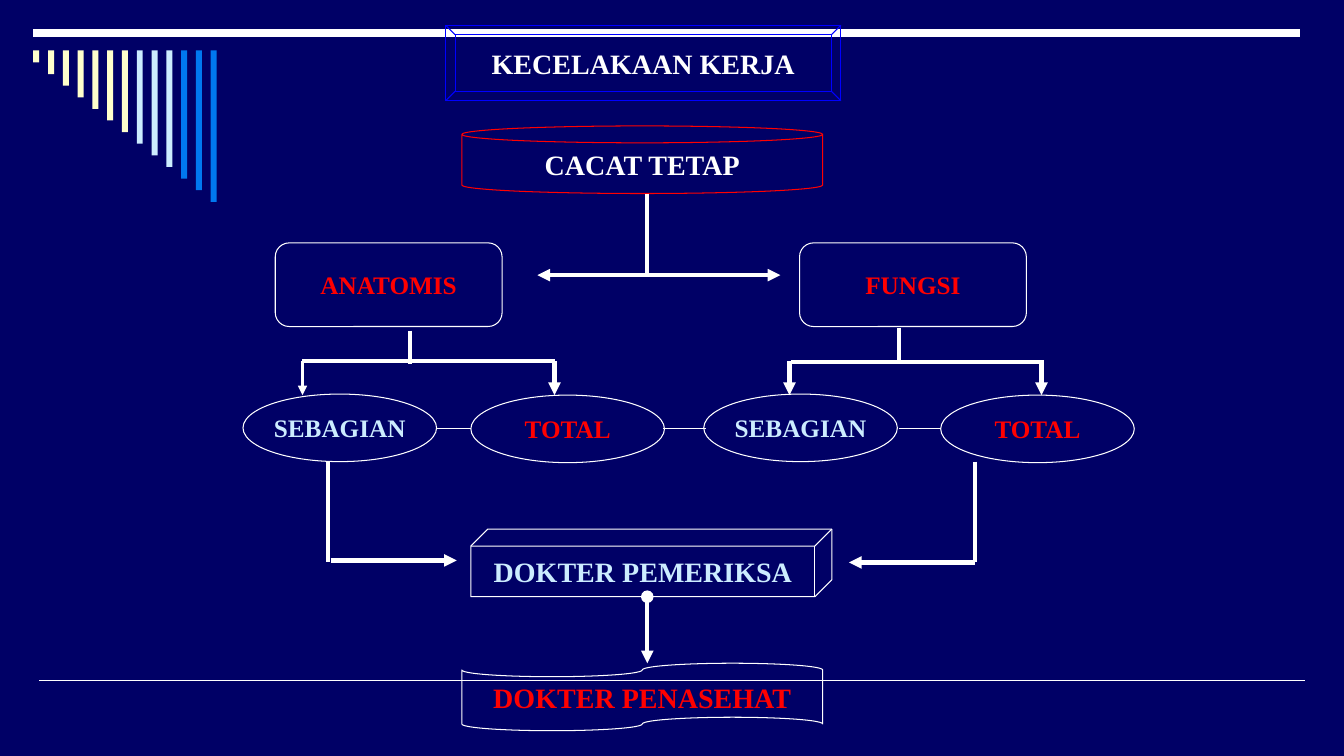
from lxml import etree
from pptx import Presentation
from pptx.dml.color import RGBColor
from pptx.enum.shapes import MSO_CONNECTOR, MSO_SHAPE
from pptx.enum.text import MSO_ANCHOR, PP_ALIGN
from pptx.oxml.ns import qn
from pptx.util import Inches, Pt

STRAIGHT = MSO_CONNECTOR.STRAIGHT
RECTANGLE = MSO_SHAPE.RECTANGLE
BEVEL = MSO_SHAPE.BEVEL
CAN = MSO_SHAPE.CAN
ROUNDED = MSO_SHAPE.ROUNDED_RECTANGLE
OVAL = MSO_SHAPE.OVAL
CUBE = MSO_SHAPE.CUBE
TAPE = MSO_SHAPE.FLOWCHART_PUNCHED_TAPE
MIDDLE = MSO_ANCHOR.MIDDLE
CENTER = PP_ALIGN.CENTER

COLORS = {
    "navy": "000066",
    "white": "FFFFFF",
    "red": "FF0000",
    "blue": "0000FF",
    "cream": "FFFFCC",
    "pale": "CCECFF",
    "azure": "0078F0",
}
FONT = "Times New Roman"
THIN, THICK = 0.75, 3

BAR_COLORS = ["cream"] * 7 + ["pale"] * 3 + ["azure"] * 3

# preset, left, top, width, height, outline, text, size, text colour
NODES = [
    (BEVEL, 4.42, 0.25, 3.92, 0.75, "blue", "KECELAKAAN KERJA", 20, "white"),
    (CAN, 4.58, 1.25, 3.58, 0.67, "red", "CACAT TETAP", 20, "white"),
    (ROUNDED, 2.73, 2.41, 2.25, 0.83, "white", "ANATOMIS", 18, "red"),
    (ROUNDED, 7.93, 2.41, 2.25, 0.83, "white", "FUNGSI", 18, "red"),
    (TAPE, 4.58, 6.58, 3.58, 0.67, "white", "DOKTER PENASEHAT", 20, "red"),
    (OVAL, 2.41, 3.91, 1.92, 0.67, "white", "SEBAGIAN", 18, "pale"),
    (OVAL, 4.67, 3.92, 1.92, 0.67, "white", "TOTAL", 18, "red"),
    (OVAL, 6.98, 3.91, 1.92, 0.67, "white", "SEBAGIAN", 18, "pale"),
    (OVAL, 9.33, 3.92, 1.92, 0.67, "white", "TOTAL", 18, "red"),
    (CUBE, 4.67, 5.25, 3.58, 0.67, "white", "DOKTER PEMERIKSA", 20, "pale"),
]

# start x, start y, end x, end y
OVAL_LINKS = [(4.33, 4.25, 4.67, 4.25), (6.58, 4.25, 7, 4.25), (8.92, 4.25, 9.33, 4.25)]
PLAIN_LINES = [
    (3.25, 4.58, 3.25, 5.58),
    (9.67, 4.58, 9.67, 5.58),
    (3, 3.58, 5.5, 3.58),
    (7.85, 3.59, 10.35, 3.59),
    (4.07, 3.28, 4.07, 3.61),
    (8.92, 3.25, 8.92, 3.58),
    (6.42, 1.92, 6.42, 2.75),
]
DOCTOR_ARROWS = [(3.28, 5.56, 4.53, 5.56), (9.67, 5.58, 8.42, 5.58)]
# x and line width of the arrows that drop onto the ovals
DROPS = [(3, 2.25), (5.5, THICK), (7.83, THICK), (10.33, THICK)]


def rgb(name):
    return RGBColor.from_string(COLORS[name])


class SlideBuilder:
    def __init__(self, slide):
        self.slide = slide
        background = slide.background.fill
        background.solid()
        background.fore_color.rgb = rgb("navy")

    def add_plain_shape(self, preset, left, top, width, height):
        shape = self.slide.shapes.add_shape(
            preset, Inches(left), Inches(top), Inches(width), Inches(height))
        shape.shadow.inherit = False
        return shape

    def add_bar(self, left, top, width, height, color):
        bar = self.add_plain_shape(RECTANGLE, left, top, width, height)
        bar.fill.solid()
        bar.fill.fore_color.rgb = rgb(color)
        bar.line.fill.background()

    def add_node(self, preset, left, top, width, height, outline, text, size, color):
        """Outlined shape with one centred bold label."""
        node = self.add_plain_shape(preset, left, top, width, height)
        node.fill.background()
        node.line.color.rgb = rgb(outline)
        node.line.width = Pt(THIN)
        frame = node.text_frame
        frame.word_wrap = False
        frame.vertical_anchor = MIDDLE
        paragraph = frame.paragraphs[0]
        paragraph.alignment = CENTER
        run = paragraph.add_run()
        run.text = text
        run.font.name = FONT
        run.font.size = Pt(size)
        run.font.bold = True
        run.font.color.rgb = rgb(color)

    def add_line(self, ends, width=THICK, head=None, tail=None):
        """White line; head and tail name the arrowheads at its start and end."""
        connector = self.slide.shapes.add_connector(
            STRAIGHT, *[Inches(value) for value in ends])
        connector.line.color.rgb = rgb("white")
        connector.line.width = Pt(width)
        outline = connector.line._get_or_add_ln()
        for tag, kind in (("a:headEnd", head), ("a:tailEnd", tail)):
            if kind:
                etree.SubElement(outline, qn(tag), type=kind)
        etree.SubElement(connector._element.spPr, qn("a:effectLst"))


def main():
    presentation = Presentation()
    presentation.slide_width = Inches(13.33)
    presentation.slide_height = Inches(7.5)
    builder = SlideBuilder(presentation.slides.add_slide(presentation.slide_layouts[6]))

    builder.add_line((0.39, 6.75, 12.94, 6.75), 1)
    builder.add_line((0.33, 0.33, 12.89, 0.33), 6)
    bar_step = (2.09 - 0.33) / (len(BAR_COLORS) - 1)
    for index, color in enumerate(BAR_COLORS):
        builder.add_bar(0.33 + index * bar_step, 0.5, 0.06, 0.12 * (1 + index * 0.96), color)

    for node in NODES:
        builder.add_node(*node)

    for ends in OVAL_LINKS:
        builder.add_line(ends, THIN)
    for ends in PLAIN_LINES:
        builder.add_line(ends)
    for ends in DOCTOR_ARROWS:
        builder.add_line(ends, tail="triangle")
    for x, width in DROPS:
        builder.add_line((x, 3.58, x, 3.92), width, tail="triangle")
    builder.add_line((5.33, 2.73, 7.74, 2.73), head="triangle", tail="triangle")
    builder.add_line((6.42, 5.92, 6.42, 6.58), head="oval", tail="triangle")

    presentation.save("out.pptx")


if __name__ == "__main__":
    main()
